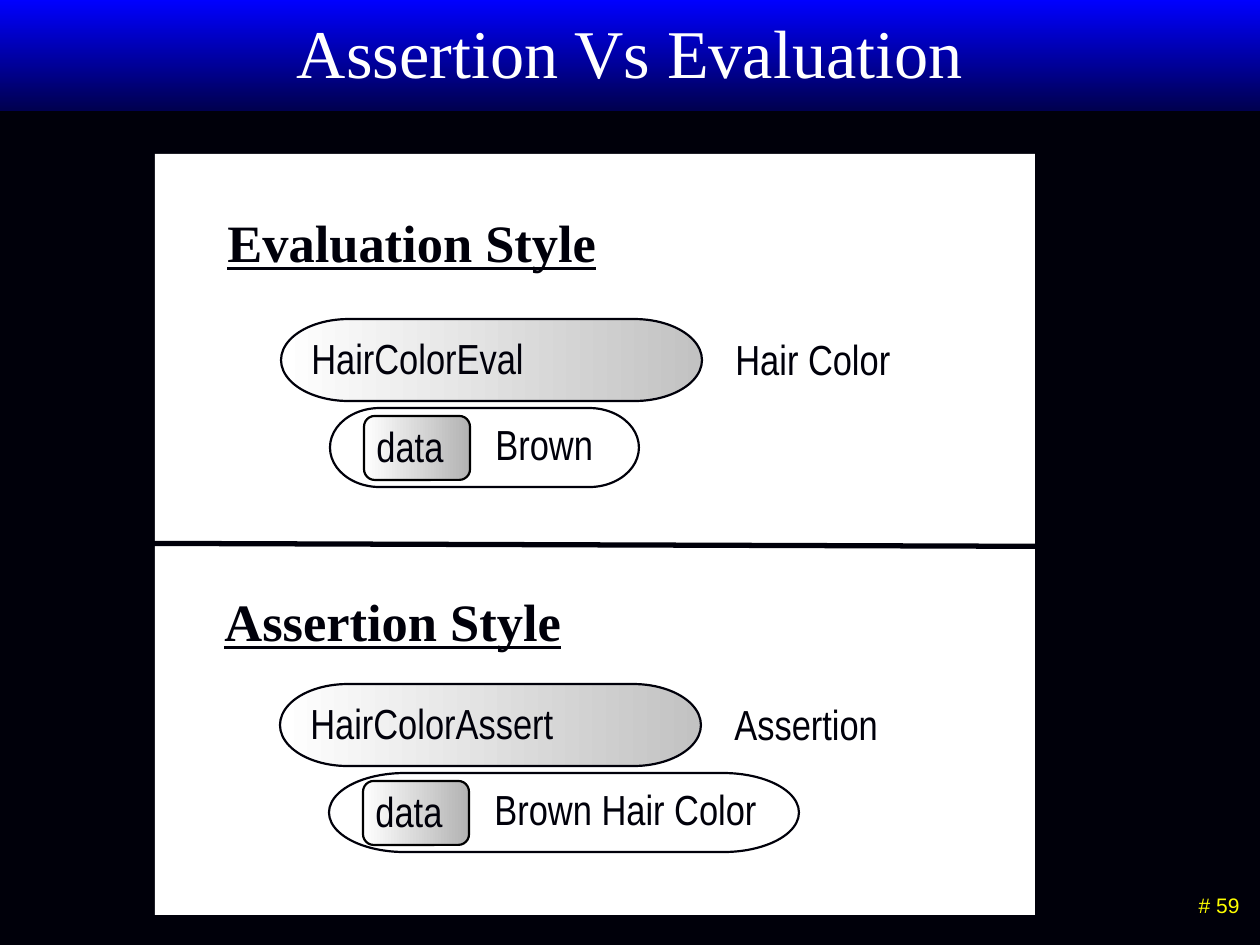
import pptx
import pptx.dml.color
import pptx.enum.shapes
import pptx.enum.text
import pptx.oxml.ns
import pptx.util
from lxml import etree

SCALE = 914400 / 126
HUES = {
    "ink": "00000A", "white": "FFFFFF", "blue": "0000FF", "navy": "00004F",
    "grey": "C2C2C2", "dark": "B3B3B3", "black": "000000", "yellow": "FFFF00",
}
KINDS = pptx.enum.shapes.MSO_SHAPE
ALIGN = pptx.enum.text.PP_ALIGN
LABEL = {"name": "Arial Narrow", "size": 24}
HEAD = {"name": "Times New Roman", "size": 30, "bold": True, "underline": True}
TITLE = {"name": "Times New Roman", "size": 39}
PAGE = {"name": "Arial", "size": 12}


def px(*nums):
    """Turn pixels into EMU lengths."""
    return [pptx.util.Emu(round(num * SCALE)) for num in nums]


def hue(name):
    """Look up a named colour."""
    return pptx.dml.color.RGBColor.from_string(HUES[name])


def write(shape, words, form, color="ink", align=ALIGN.LEFT):
    """Put one formatted line of text in a shape."""
    frame = shape.text_frame
    frame.word_wrap = True
    frame.vertical_anchor = pptx.enum.text.MSO_ANCHOR.TOP
    frame.auto_size = pptx.enum.text.MSO_AUTO_SIZE.NONE
    para = frame.paragraphs[0]
    para.alignment = align
    run = para.add_run()
    run.text = words
    for key, value in form.items():
        setattr(run.font, key, pptx.util.Pt(value) if key == "size" else value)
    run.font.color.rgb = hue(color)


def label(slide, box, words, form=LABEL, **look):
    """Add a text box."""
    write(slide.shapes.add_textbox(*px(*box)), words, form, **look)


def block(slide, kind, box, fill, edge=None, angle=0):
    """Add a preset shape with a plain or two-colour fill."""
    shape = slide.shapes.add_shape(kind, *px(*box))
    shape.shadow.inherit = False
    if len(fill) == 1:
        shape.fill.solid()
        shape.fill.fore_color.rgb = hue(fill[0])
    else:
        shape.fill.gradient()
        shape.fill.gradient_angle = angle
        for stop, name in zip(shape.fill.gradient_stops, fill):
            stop.color.rgb = hue(name)
    if edge:
        shape.line.color.rgb = hue(edge)
        shape.line.width = pptx.util.Pt(1.25)
    else:
        shape.line.fill.background()
    return shape


def rule(slide, ends):
    """Draw the line between the two styles."""
    kind = pptx.enum.shapes.MSO_CONNECTOR.STRAIGHT
    line = slide.shapes.add_connector(kind, *px(*ends))
    line.line.color.rgb = hue("ink")
    line.line.width = pptx.util.Pt(3)
    etree.SubElement(line.element.spPr, pptx.oxml.ns.qn("a:effectLst"))


def style(slide, left, top, name, note, value, wide):
    """Draw a named pill with its note and the data capsule below."""
    pill = KINDS.FLOWCHART_TERMINATOR
    block(slide, pill, (left + 49, top + 89, wide, 79), ["white"], "ink")
    label(slide, (left + 202, top + 93, 360, 63), value)
    label(slide, (left + 442, top + 8, 226, 63), note)
    block(slide, pill, (left, top, 421, 82), ["white", "grey"], "ink")
    label(slide, (left + 18, top + 7, 388, 63), name)
    chip = (left + 83, top + 97, 106, 64)
    block(slide, KINDS.ROUNDED_RECTANGLE, chip, ["white", "dark"], "black")
    label(slide, (left + 83, top + 95, 106, 63), "data")


def main():
    """Build and save the slide."""
    deck = pptx.Presentation()
    deck.slide_width, deck.slide_height = px(1260, 945)
    slide = deck.slides.add_slide(deck.slide_layouts[5])
    slide.background.fill.solid()
    slide.background.fill.fore_color.rgb = hue("ink")

    title = slide.shapes.title
    title.left, title.top, title.width, title.height = px(94, 4, 1072, 157)
    write(title, "Assertion Vs Evaluation", TITLE, "white", ALIGN.CENTER)
    band = block(slide, KINDS.RECTANGLE, (0, 0, 1260, 111), ["blue", "navy"], angle=270)
    title.element.addprevious(band.element)
    label(slide, (1121, 886, 131, 43), "# 59", PAGE, color="yellow", align=ALIGN.RIGHT)

    block(slide, KINDS.RECTANGLE, (155, 154, 880, 761), ["white"])
    style(slide, 281, 319, "HairColorEval", "Hair Color", "Brown", 309)
    label(slide, (215, 204, 404, 76), "Evaluation Style", HEAD)
    rule(slide, (28, 543, 1230, 547))
    style(slide, 280, 684, "HairColorAssert", "Assertion", "Brown Hair Color", 470)
    label(slide, (212, 583, 404, 76), "Assertion Style", HEAD)
    deck.save("out.pptx")


if __name__ == "__main__":
    main()
